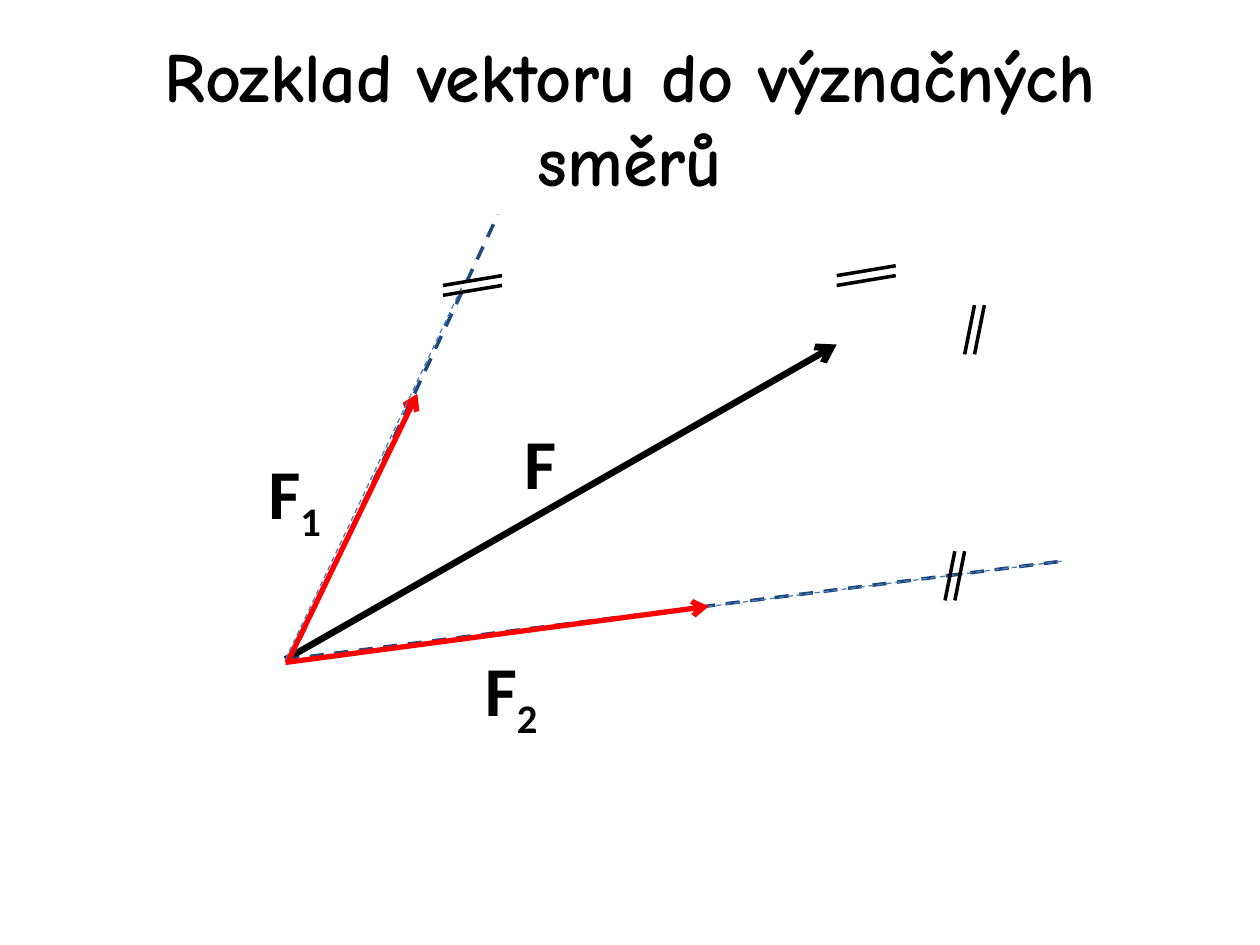
from dataclasses import dataclass
from typing import NamedTuple

from lxml import etree
from pptx import Presentation
from pptx import util as u
from pptx.dml.color import RGBColor
from pptx.enum import dml, shapes, text
from pptx.oxml import ns

WIDTH, HEIGHT = u.Inches(10), u.Inches(7.5)
COLUMNS, ROWS = 128, 96


@dataclass(frozen=True)
class Theme:
    ink: str = "000000"
    component: str = "FF0000"
    direction: str = "1F497D"
    guide: str = "4B7EBC"
    title_font: str = "Comic Neue"
    label_font: str = "Calibri"
    text_size: int = 40


THEME = Theme()


class Point(NamedTuple):
    """A place on the grid, in columns and rows."""
    col: float
    row: float


class Stroke(NamedTuple):
    color: str
    width: float
    dashed: bool = False
    arrow: bool = False


class Segment(NamedTuple):
    start: Point
    end: Point
    stroke: Stroke


class ParallelMark(NamedTuple):
    """Two equal strokes, the second one moved by a step."""
    start: Point
    end: Point
    step: Point


class Label(NamedTuple):
    corner: Point
    symbol: str
    index: str = ""


RESULTANT = Stroke(THEME.ink, 3.75, arrow=True)
COMPONENT = Stroke(THEME.component, 3, arrow=True)
DIRECTION = Stroke(THEME.direction, 2, dashed=True)
GUIDE = Stroke(THEME.guide, 0.75, dashed=True)
TICK = Stroke(THEME.ink, 2)

ORIGIN = Point(29, 67)
LOWER_END = Point(108, 57)
RIGHT, DOWN = Point(1, 0), Point(0, 1)

SEGMENTS = [
    Segment(ORIGIN, Point(85, 35), RESULTANT),
    Segment(ORIGIN, LOWER_END, DIRECTION),
    Segment(Point(29.4, 67.2), Point(50.6, 21.8), DIRECTION),
    Segment(Point(30, 67), LOWER_END, GUIDE),
    Segment(Point(29.2, 67.3), Point(42.4, 40), COMPONENT),
    Segment(Point(29, 67.3), Point(72, 61.6), COMPONENT),
    Segment(ORIGIN, Point(47, 29), GUIDE),
]
MARKS = [
    ParallelMark(Point(97, 56), Point(96, 61), RIGHT),
    ParallelMark(Point(99, 31), Point(98, 36), RIGHT),
    ParallelMark(Point(45, 29), Point(51, 28), DOWN),
    ParallelMark(Point(85, 28), Point(91, 27), DOWN),
]
LABELS = [
    Label(Point(52, 42), "F"),
    Label(Point(26, 45), "F", "1"),
    Label(Point(48, 65), "F", "2"),
]


def x(columns: float) -> int:
    return round(WIDTH * columns / COLUMNS)


def y(rows: float) -> int:
    return round(HEIGHT * rows / ROWS)


def shift(point: Point, step: Point) -> Point:
    return Point(point.col + step.col, point.row + step.row)


def draw_segment(canvas, segment: Segment) -> None:
    start, end, stroke = segment
    connector = canvas.add_connector(
        shapes.MSO_CONNECTOR.STRAIGHT,
        x(start.col), y(start.row), x(end.col), y(end.row))
    line = connector.line
    line.color.rgb = RGBColor.from_string(stroke.color)
    line.width = u.Pt(stroke.width)
    if stroke.dashed:
        line.dash_style = dml.MSO_LINE.DASH
    properties = connector._element.spPr
    if stroke.arrow:
        etree.SubElement(properties.find(ns.qn("a:ln")), ns.qn("a:tailEnd"), type="arrow")
    etree.SubElement(properties, ns.qn("a:effectLst"))


def draw_mark(slide, mark: ParallelMark) -> None:
    pair = slide.shapes.add_group_shape().shapes
    draw_segment(pair, Segment(mark.start, mark.end, TICK))
    draw_segment(pair, Segment(shift(mark.start, mark.step),
                               shift(mark.end, mark.step), TICK))


def add_text(slide, corner: Point, size: Point, content: str, font: str):
    """Add a bold text box and return its paragraph."""
    box = slide.shapes.add_textbox(x(corner.col), y(corner.row), x(size.col), y(size.row))
    frame = box.text_frame
    frame.word_wrap = True
    frame.text = content
    paragraph = frame.paragraphs[0]
    style_run(paragraph.runs[0], font)
    return paragraph


def style_run(run, font: str) -> None:
    run.font.name = font
    run.font.size = u.Pt(THEME.text_size)
    run.font.bold = True
    run.font.color.rgb = RGBColor.from_string(THEME.ink)


def draw_title(slide, content: str) -> None:
    paragraph = add_text(slide, Point(6.4, 3.84), Point(115.2, 16), content, THEME.title_font)
    paragraph.alignment = text.PP_ALIGN.CENTER
    slide.shapes[-1].text_frame.vertical_anchor = text.MSO_ANCHOR.MIDDLE


def draw_label(slide, label: Label) -> None:
    paragraph = add_text(slide, label.corner, Point(9, 9.9), label.symbol, THEME.label_font)
    if label.index:
        subscript = paragraph.add_run()
        subscript.text = label.index
        style_run(subscript, THEME.label_font)
        subscript.font._element.set("baseline", "-25000")


def main() -> None:
    deck = Presentation()
    deck.slide_width, deck.slide_height = WIDTH, HEIGHT
    slide = deck.slides.add_slide(deck.slide_layouts[6])

    # Heading
    draw_title(slide, "Rozklad vektoru do význačných směrů")

    # Force, its components and their directions
    for segment in SEGMENTS:
        draw_segment(slide.shapes, segment)

    # Signs of parallel lines
    for mark in MARKS:
        draw_mark(slide, mark)

    # Names of the vectors
    for label in LABELS:
        draw_label(slide, label)

    deck.save("out.pptx")


if __name__ == "__main__":
    main()
